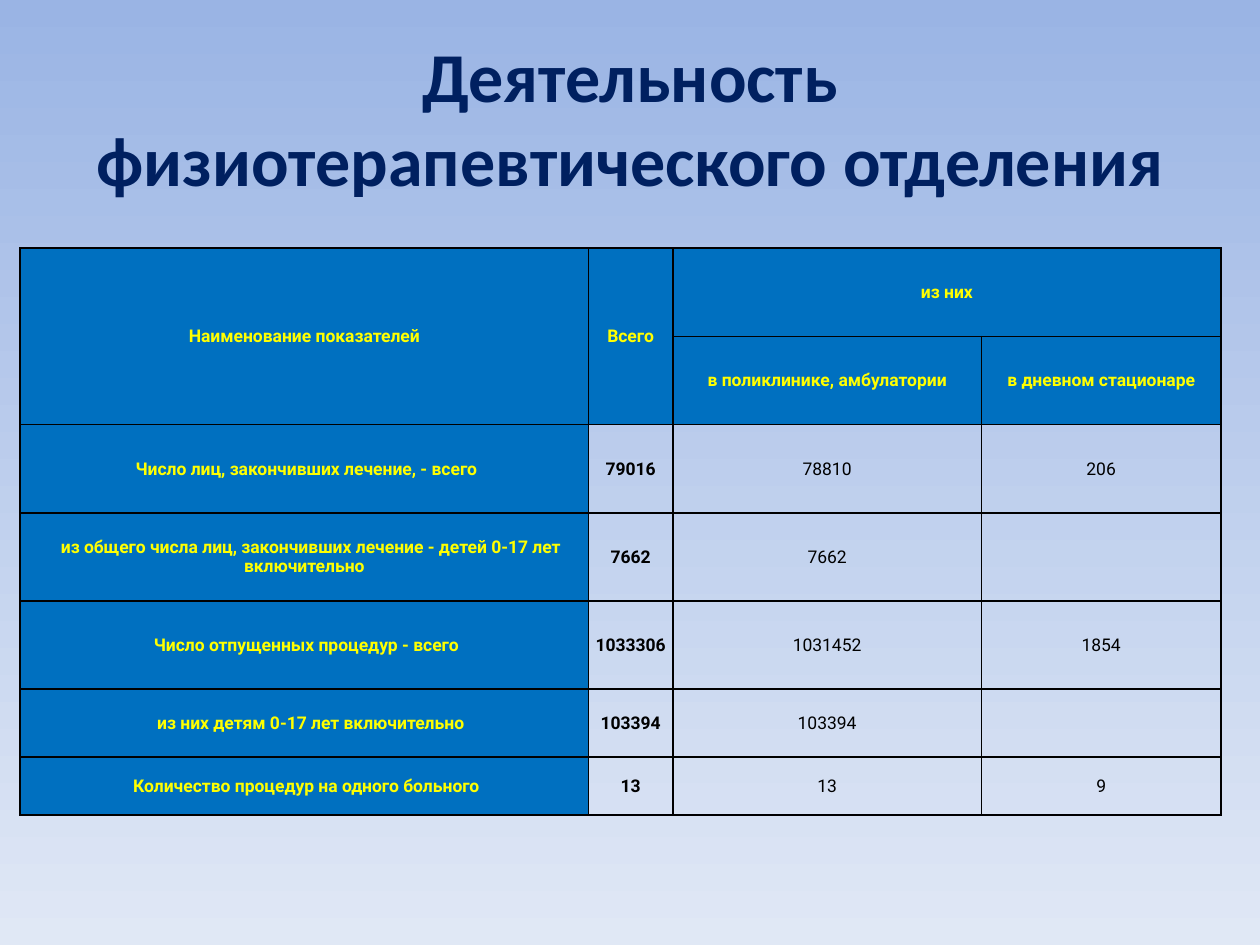
from dataclasses import dataclass

import pptx
import pptx.dml.color
import pptx.enum.text
import pptx.oxml
import pptx.oxml.ns
import pptx.util

Inches = pptx.util.Inches
Pt = pptx.util.Pt
RGB = pptx.dml.color.RGBColor.from_string


@dataclass(frozen=True)
class Theme:
    bg_top: str = "9AB4E4"
    bg_bottom: str = "E0E8F5"
    title: str = "002060"
    label_fill: str = "0070C0"
    label_text: str = "FFFF00"
    value_text: str = "000000"
    border: str = "000000"
    title_font: str = "Calibri"
    table_font: str = "Roboto"
    title_size: int = 40
    table_size: int = 10


@dataclass(frozen=True)
class Indicator:
    name: str
    total: str
    clinic: str
    day_hospital: str
    indent: float = 0.03


THEME = Theme()
SUB_INDENT = 0.1
COLS = (4.51, 0.67, 2.45, 1.9)
ROWS = (0.7,) * 5 + (0.54, 0.46)
HEADERS = {
    (0, 0): "Наименование показателей",
    (0, 1): "Всего",
    (0, 2): "из них",
    (1, 2): "в поликлинике, амбулатории",
    (1, 3): "в дневном стационаре",
}
INDICATORS = (
    Indicator("Число лиц, закончивших лечение, - всего", "79016", "78810", "206"),
    Indicator("из общего числа лиц, закончивших лечение - детей 0-17 лет включительно",
              "7662", "7662", "", SUB_INDENT),
    Indicator("Число отпущенных процедур - всего", "1033306", "1031452", "1854"),
    Indicator("из них детям 0-17 лет включительно", "103394", "103394", "", SUB_INDENT),
    Indicator("Количество процедур на одного больного", "13", "13", "9"),
)


def style_text(tf, font: str, size: int, color: str, bold: bool) -> None:
    p = tf.paragraphs[0]
    p.alignment = pptx.enum.text.PP_ALIGN.CENTER
    for r in p.runs:
        r.font.name, r.font.size, r.font.bold = font, Pt(size), bold
        r.font.color.rgb = RGB(color)


def add_borders(cell) -> None:
    tc_pr = cell._tc.get_or_add_tcPr()
    for side in ("lnL", "lnR", "lnT", "lnB"):
        tc_pr.append(pptx.oxml.parse_xml(
            f'<a:{side} {pptx.oxml.ns.nsdecls("a")} w="{Pt(1)}"><a:solidFill>'
            f'<a:srgbClr val="{THEME.border}"/></a:solidFill></a:{side}>'))


def frame_cell(cell, is_label: bool) -> None:
    add_borders(cell)
    if is_label:
        cell.fill.solid()
        cell.fill.fore_color.rgb = RGB(THEME.label_fill)
    else:
        cell.fill.background()


def write_cell(cell, text: str, is_label: bool, bold: bool, indent: float = 0) -> None:
    cell.margin_left = cell.margin_right = cell.margin_top = Inches(0.01)
    cell.margin_bottom = 0
    cell.vertical_anchor = pptx.enum.text.MSO_ANCHOR.MIDDLE
    if not text:
        return
    tf = cell.text_frame
    tf.text = text
    color = THEME.label_text if is_label else THEME.value_text
    style_text(tf, THEME.table_font, THEME.table_size, color, bold)
    p = tf.paragraphs[0]
    p.line_spacing = 0.93
    if indent:
        p._p.get_or_add_pPr().set("indent", str(Inches(indent)))


def add_title(slide) -> None:
    sp = slide.shapes.title
    sp.left, sp.top, sp.width, sp.height = map(Inches, (0.5, 0.21, 9, 1.43))
    tf = sp.text_frame
    tf.text = "Деятельность физиотерапевтического отделения"
    tf.word_wrap = True
    tf.vertical_anchor = pptx.enum.text.MSO_ANCHOR.MIDDLE
    style_text(tf, THEME.title_font, THEME.title_size, THEME.title, True)


def add_indicator_table(slide) -> None:
    table = slide.shapes.add_table(
        len(ROWS), len(COLS), Inches(0.16), Inches(1.97),
        Inches(sum(COLS)), Inches(sum(ROWS))).table
    table.first_row = table.horz_banding = False
    for col, width in zip(table.columns, COLS):
        col.width = Inches(width)
    for row, height in zip(table.rows, ROWS):
        row.height = Inches(height)
    for r in range(len(ROWS)):
        for c in range(len(COLS)):
            frame_cell(table.cell(r, c), r < 2 or c == 0)

    # Two-level header
    for first, last in (((0, 0), (1, 0)), ((0, 1), (1, 1)), ((0, 2), (0, 3))):
        table.cell(*first).merge(table.cell(*last))
    for position, text in HEADERS.items():
        write_cell(table.cell(*position), text, True, True)

    # Indicator rows
    for r, item in enumerate(INDICATORS, start=2):
        write_cell(table.cell(r, 0), item.name, True, True, item.indent)
        write_cell(table.cell(r, 1), item.total, False, True)
        write_cell(table.cell(r, 2), item.clinic, False, False)
        write_cell(table.cell(r, 3), item.day_hospital, False, False)


def main() -> None:
    prs = pptx.Presentation()
    prs.slide_width, prs.slide_height = Inches(10), Inches(7.5)
    slide = prs.slides.add_slide(prs.slide_layouts[5])

    # Background runs from top to bottom
    fill = slide.background.fill
    fill.gradient()
    fill.gradient_angle = 270
    for stop, color in zip(fill.gradient_stops, (THEME.bg_top, THEME.bg_bottom)):
        stop.color.rgb = RGB(color)

    add_title(slide)
    add_indicator_table(slide)
    prs.save("out.pptx")


if __name__ == "__main__":
    main()
